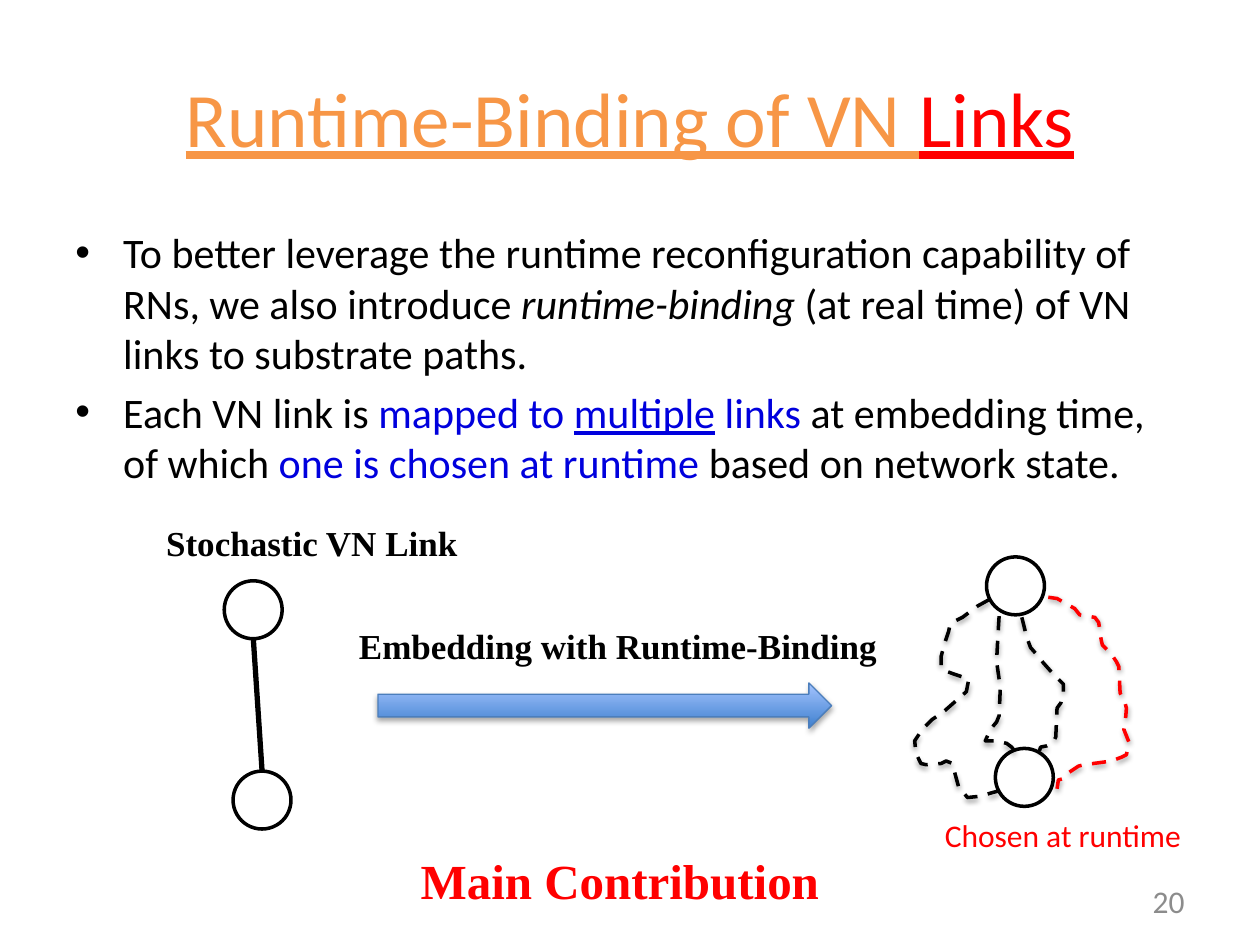
from lxml import etree
from pptx import Presentation
from pptx.dml.color import RGBColor
from pptx.enum.dml import MSO_LINE
from pptx.enum.shapes import MSO_CONNECTOR, MSO_SHAPE
from pptx.enum.text import MSO_ANCHOR, PP_ALIGN
from pptx.oxml.ns import qn
from pptx.util import Inches, Pt

BLACK = RGBColor(0x00, 0x00, 0x00)
RED = RGBColor(0xFF, 0x00, 0x00)
ORANGE = RGBColor(0xF7, 0x96, 0x46)
BLUE = RGBColor(0x00, 0x00, 0xDD)
GRAY = RGBColor(0x8C, 0x8C, 0x8C)
ARROW_DARK = RGBColor(0x3F, 0x80, 0xCE)
ARROW_LIGHT = RGBColor(0xA4, 0xC4, 0xFF)
ARROW_EDGE = RGBColor(0x4B, 0x7E, 0xBC)
SANS, SERIF = "Calibri", "Times New Roman"

# Runs: text, colour, style ("u" underlined, "i" italic)
TITLE = [("Runtime-Binding of VN ", ORANGE, "u"), ("Links", RED, "u")]
BULLETS = [
    [("To better leverage the runtime reconfiguration capability of RNs, "
      "we also introduce ", BLACK, ""),
     ("runtime-binding ", BLACK, "i"),
     ("(at real time) of VN links to substrate paths.", BLACK, "")],
    [("Each VN link is ", BLACK, ""),
     ("mapped to ", BLUE, ""),
     ("multiple", BLUE, "u"),
     (" links ", BLUE, ""),
     ("at embedding time, of which ", BLACK, ""),
     ("one is chosen at runtime ", BLUE, ""),
     ("based on network state.", BLACK, "")],
]
# Labels: text, box, font, size, bold, colour
LABELS = [
    ("Stochastic VN Link", (1.22, 4.09, 2.53, 0.44), SERIF, 20, True, BLACK),
    ("Embedding with Runtime-Binding", (2.75, 4.91, 4.35, 0.44), SERIF, 20, True, BLACK),
    ("Chosen at runtime", (7.4, 6.43, 2.1, 0.4), SANS, 18, False, RED),
    ("Main Contribution", (3.24, 6.7, 3.4, 0.57), SERIF, 28, True, RED),
]
NODE_SIZE = 0.46
NODES = [(1.78, 4.61), (1.85, 6.12), (7.83, 4.42), (7.9, 5.94)]
VN_LINK = (2.01, 5.06, 2.08, 6.12)
ARROW = (3, 5.42, 3.6, 0.36)
# Substrate paths: colour, points from the upper node to the lower one
SUBSTRATE_PATHS = [
    (RED, [(8.32, 4.74), (8.39, 4.75), (8.53, 4.83), (8.57, 4.88), (8.69, 4.9),
           (8.72, 4.94), (8.74, 5.08), (8.75, 5.12), (8.82, 5.19), (8.86, 5.25),
           (8.88, 5.29), (8.89, 5.5), (8.93, 5.58), (8.94, 5.62), (8.93, 5.75),
           (8.92, 5.79), (8.96, 5.89), (8.94, 5.99), (8.9, 6.01), (8.82, 6.04),
           (8.6, 6.07), (8.56, 6.08), (8.47, 6.14), (8.44, 6.18), (8.4, 6.19),
           (8.39, 6.26)]),
    (BLACK, [(7.85, 4.76), (7.76, 4.81), (7.64, 4.9), (7.58, 4.93), (7.54, 4.96),
             (7.53, 5.01), (7.5, 5.1), (7.47, 5.21), (7.47, 5.28), (7.49, 5.32),
             (7.57, 5.35), (7.69, 5.39), (7.67, 5.49), (7.58, 5.57), (7.5, 5.64),
             (7.46, 5.67), (7.4, 5.71), (7.32, 5.79), (7.26, 5.88), (7.27, 5.98),
             (7.31, 6.06), (7.35, 6.07), (7.47, 6.06), (7.51, 6.04), (7.56, 6.06),
             (7.58, 6.14), (7.61, 6.25), (7.68, 6.33), (7.78, 6.32), (7.88, 6.29),
             (7.92, 6.28)]),
    (BLACK, [(8.11, 4.9), (8.15, 5.06), (8.18, 5.14), (8.25, 5.22), (8.28, 5.26),
             (8.36, 5.35), (8.44, 5.43), (8.44, 5.5), (8.42, 5.58), (8.39, 5.62),
             (8.38, 5.85), (8.36, 5.89), (8.31, 5.92), (8.26, 5.93), (8.25, 5.96)]),
    (BLACK, [(7.93, 4.89), (7.92, 5.05), (7.91, 5.25), (7.93, 5.39), (7.94, 5.44),
             (7.93, 5.68), (7.91, 5.73), (7.86, 5.79), (7.82, 5.88), (7.91, 5.88),
             (7.99, 5.9), (8.03, 5.93), (8.06, 5.97)]),
]


def inches(values):
    return [Inches(value) for value in values]


def add_text(slide, box, paragraphs, font, size, bold=False, wrap=True,
             align=PP_ALIGN.LEFT, anchor=MSO_ANCHOR.TOP):
    text_frame = slide.shapes.add_textbox(*inches(box)).text_frame
    text_frame.word_wrap = wrap
    text_frame.vertical_anchor = anchor
    for index, runs in enumerate(paragraphs):
        paragraph = text_frame.add_paragraph() if index else text_frame.paragraphs[0]
        paragraph.alignment = align
        paragraph.font.name = font
        paragraph.font.size = Pt(size)
        paragraph.font.bold = bold
        for text, color, style in runs:
            run = paragraph.add_run()
            run.text = text
            run.font.color.rgb = color
            run.font.underline = "u" in style
            run.font.italic = "i" in style
    return text_frame


def add_bullet(paragraph):
    paragraph.space_before = Pt(4.8)
    properties = paragraph._p.get_or_add_pPr()
    properties.set("marL", str(Inches(0.38)))
    properties.set("indent", str(-Inches(0.38)))
    etree.SubElement(properties, qn("a:buFont"), typeface="Arial")
    etree.SubElement(properties, qn("a:buChar"), char="•")


def set_line(shape, color, width):
    shape.line.color.rgb = color
    shape.line.width = Pt(width)


def add_shadow(shape, opacity, blur, distance):
    """Cast a black shadow straight down; blur and distance in points."""
    shape.shadow.inherit = False
    effects = shape._element.spPr.find(qn("a:effectLst"))
    shadow = etree.SubElement(effects, qn("a:outerShdw"), blurRad=str(Pt(blur)),
                              dist=str(Pt(distance)), dir="5400000", rotWithShape="0")
    color = etree.SubElement(shadow, qn("a:srgbClr"), val=str(BLACK))
    etree.SubElement(color, qn("a:alpha"), val=str(opacity * 1000))


def add_node(slide, left, top):
    node = slide.shapes.add_shape(
        MSO_SHAPE.OVAL, *inches((left, top, NODE_SIZE, NODE_SIZE)))
    node.fill.background()
    set_line(node, BLACK, 2)
    node.shadow.inherit = False


def add_vn_link(slide):
    link = slide.shapes.add_connector(MSO_CONNECTOR.STRAIGHT, *inches(VN_LINK))
    set_line(link, BLACK, 3)
    etree.SubElement(link._element.spPr, qn("a:effectLst"))


def add_arrow(slide):
    arrow = slide.shapes.add_shape(MSO_SHAPE.RIGHT_ARROW, *inches(ARROW))
    arrow.fill.gradient()
    arrow.fill.gradient_angle = 90
    for stop, color in zip(arrow.fill.gradient_stops, (ARROW_DARK, ARROW_LIGHT)):
        stop.color.rgb = color
    set_line(arrow, ARROW_EDGE, 0.75)
    add_shadow(arrow, 35, 3.1, 1.8)


def add_substrate_path(slide, color, points):
    start, *rest = [inches(point) for point in points]
    builder = slide.shapes.build_freeform(*start)
    builder.add_line_segments(rest, close=False)
    curve = builder.convert_to_shape()
    curve.fill.background()
    set_line(curve, color, 2)
    curve.line.dash_style = MSO_LINE.DASH
    add_shadow(curve, 38, 3.1, 1.6)


def main():
    presentation = Presentation()
    presentation.slide_width, presentation.slide_height = inches((10, 7.5))
    slide = presentation.slides.add_slide(presentation.slide_layouts[6])

    add_text(slide, (0.5, 0.3, 9, 1.25), [TITLE], SANS, 44,
             align=PP_ALIGN.CENTER, anchor=MSO_ANCHOR.MIDDLE)
    add_text(slide, (7.17, 6.95, 2.33, 0.4), [[("20", GRAY, "")]], SANS, 18,
             align=PP_ALIGN.RIGHT, anchor=MSO_ANCHOR.MIDDLE)
    body = add_text(slide, (0.5, 1.75, 9, 4.95), BULLETS, SANS, 24)
    for paragraph in body.paragraphs:
        add_bullet(paragraph)

    for left, top in NODES:
        add_node(slide, left, top)
    add_vn_link(slide)
    add_arrow(slide)
    for color, points in SUBSTRATE_PATHS:
        add_substrate_path(slide, color, points)
    for text, box, font, size, bold, color in LABELS:
        add_text(slide, box, [[(text, color, "")]], font, size, bold, wrap=False)

    presentation.save("out.pptx")


if __name__ == "__main__":
    main()
